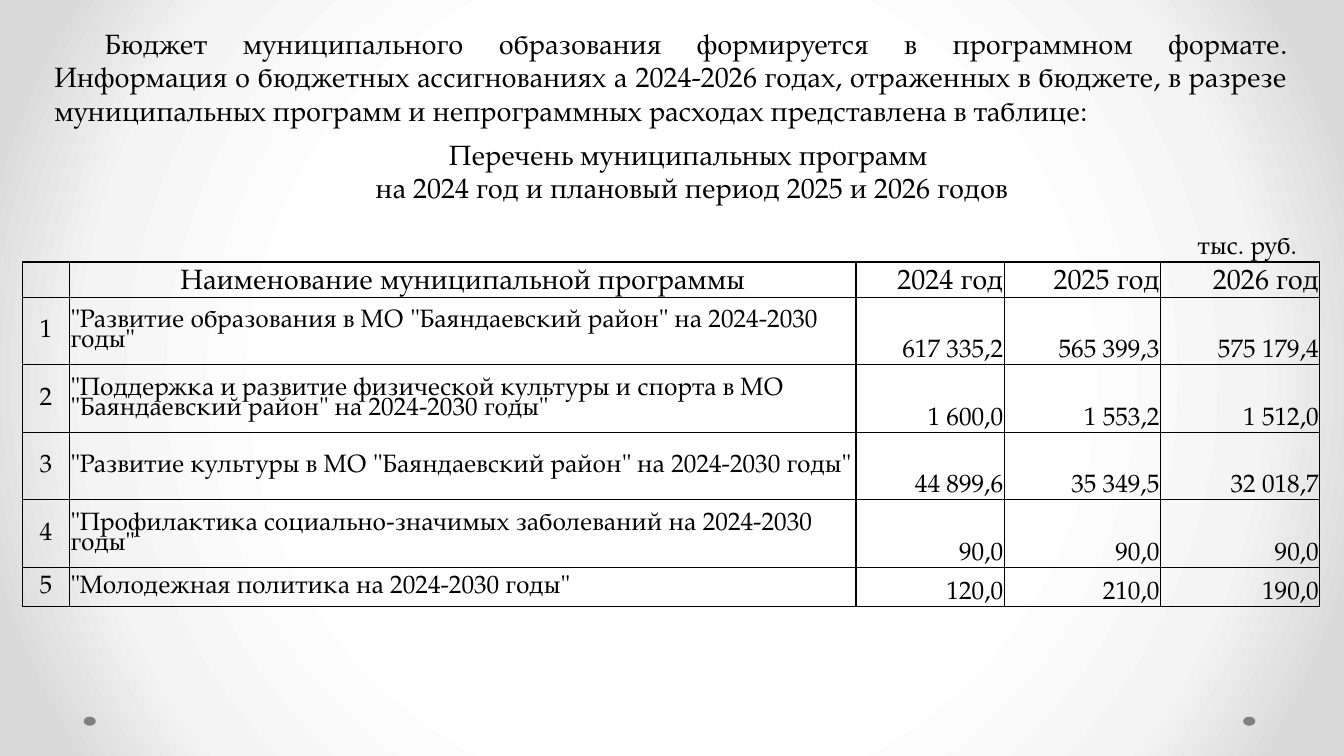
from pptx import Presentation
from pptx.dml.color import RGBColor
from pptx.enum.shapes import MSO_SHAPE as Shape
from pptx.enum.text import MSO_ANCHOR as Anchor, MSO_AUTO_SIZE as AutoSize, PP_ALIGN as Align
from pptx.oxml import parse_xml
from pptx.oxml.ns import nsdecls, qn
from pptx.util import Emu, Pt

BLACK = RGBColor(0x00, 0x00, 0x00)
GRAY = RGBColor(0x80, 0x80, 0x80)
BACKDROP = [
    (50, RGBColor(0xFF, 0xFF, 0xFF)),
    (76, RGBColor(0xF4, 0xF4, 0xF4)),
    (92, RGBColor(0xDA, 0xDA, 0xDA)),
]
FONT = "TeX Gyre Pagella"
TITLE_ONLY = 5

INTRO = (
    "Бюджет муниципального образования формируется в программном формате. "
    "Информация о бюджетных ассигнованиях а 2024-2026 годах, отраженных в бюджете, "
    "в разрезе муниципальных программ и непрограммных расходах представлена в таблице:"
)
HEADING = ["Перечень муниципальных программ ", "на 2024 год и плановый период 2025 и 2026 годов"]
HEADER = ["", "Наименование муниципальной программы", "2024 год", "2025 год", "2026 год"]
PROGRAMS = [
    ('"Развитие образования в МО "Баяндаевский район" на 2024-2030 годы"',
     "617 335,2", "565 399,3", "575 179,4"),
    ('"Поддержка и развитие физической культуры и спорта в МО "Баяндаевский район" на 2024-2030 годы"',
     "1 600,0", "1 553,2", "1 512,0"),
    ('"Развитие культуры в МО "Баяндаевский район" на 2024-2030 годы"',
     "44 899,6", "35 349,5", "32 018,7"),
    ('"Профилактика социально-значимых заболеваний на 2024-2030 годы"',
     "90,0", "90,0", "90,0"),
    ('"Молодежная политика на 2024-2030 годы"',
     "120,0", "210,0", "190,0"),
]
COLUMNS = [47, 780, 147, 155, 158]
ROWS = [35, 67, 67, 67, 67, 39]


def px(count):
    """One px is a hundredth of an inch."""
    return Emu(count * 9144)


class SlideBuilder:
    def __init__(self, page, font, color):
        self.page = page
        self.font = font
        self.color = color

    def backdrop(self, stops):
        self.page.background.fill.gradient()
        gradient = self.page.element.find(".//" + qn("a:gradFill"))
        marks = "".join(
            f'<a:gs pos="{percent * 1000}"><a:srgbClr val="{color}"/></a:gs>'
            for percent, color in stops
        )
        gradient.getparent().replace(gradient, parse_xml(
            f'<a:gradFill {nsdecls("a")} rotWithShape="1"><a:gsLst>{marks}</a:gsLst>'
            '<a:path path="circle"><a:fillToRect l="50000" t="50000" r="50000" b="50000"/>'
            "</a:path></a:gradFill>"
        ))

    def dot(self, left, top, width, height, color):
        oval = self.page.shapes.add_shape(Shape.OVAL, px(left), px(top), px(width), px(height))
        oval.shadow.inherit = False
        oval.fill.solid()
        oval.fill.fore_color.rgb = color
        oval.line.fill.background()

    def add_span(self, para, text, size, align):
        para.alignment = align
        span = para.add_run()
        span.text = text
        span.font.name = self.font
        span.font.size = Pt(size)
        span.font.color.rgb = self.color

    def fill_box(self, box, lines, size, align, wrap=True, indent=0):
        frame = box.text_frame
        frame.word_wrap = wrap
        frame.auto_size = AutoSize.SHAPE_TO_FIT_TEXT
        frame.vertical_anchor = Anchor.TOP
        for number, line in enumerate(lines):
            para = frame.add_paragraph() if number else frame.paragraphs[0]
            para.space_before = Pt(0)
            if indent:
                properties = para._p.get_or_add_pPr()
                properties.set("marL", "0")
                properties.set("indent", str(px(indent)))
            self.add_span(para, line, size, align)

    def text(self, left, top, width, height, lines, size, align, wrap=True, indent=0):
        box = self.page.shapes.add_textbox(px(left), px(top), px(width), px(height))
        self.fill_box(box, lines, size, align, wrap, indent)

    def title(self, left, top, width, height, lines, size):
        box = self.page.shapes.title
        box.left, box.top, box.width, box.height = px(left), px(top), px(width), px(height)
        self.fill_box(box, lines, size, Align.CENTER)

    def table(self, left, top, columns, rows):
        frame = self.page.shapes.add_table(
            len(rows), len(columns), px(left), px(top), px(sum(columns)), px(sum(rows))
        )
        grid = frame.table
        grid.first_row = grid.horz_banding = False
        for column, width in zip(grid.columns, columns):
            column.width = px(width)
        for row, height in zip(grid.rows, rows):
            row.height = px(height)
        return grid

    def cell(self, cell, text, size, align, anchor, spacing=1.0):
        cell.margin_left = cell.margin_top = cell.margin_right = px(1)
        cell.margin_bottom = px(0)
        cell.vertical_anchor = anchor
        properties = cell._tc.get_or_add_tcPr()
        for side in ("lnL", "lnR", "lnT", "lnB"):
            properties.append(parse_xml(
                f'<a:{side} {nsdecls("a")} w="{Pt(1)}"><a:solidFill>'
                f'<a:srgbClr val="{self.color}"/></a:solidFill></a:{side}>'
            ))
        cell.fill.background()
        if text:
            para = cell.text_frame.paragraphs[0]
            para.line_spacing = spacing
            self.add_span(para, text, size, align)


def main():
    deck = Presentation()
    deck.slide_width, deck.slide_height = px(1333), px(750)
    page = deck.slides.add_slide(deck.slide_layouts[TITLE_ONLY])
    builder = SlideBuilder(page, FONT, BLACK)

    # Background and footer dots
    builder.backdrop(BACKDROP)
    for left in (1233, 83):
        builder.dot(left, 711, 12, 9, GRAY)

    # Introduction and heading
    builder.text(44, 21, 1242, 111, [INTRO], 20, Align.JUSTIFY, indent=50)
    builder.title(249, 131, 874, 77, HEADING, 20)

    # Programme table
    grid = builder.table(22, 260, COLUMNS, ROWS)
    for column, label in enumerate(HEADER):
        align = Align.RIGHT if column > 1 else Align.CENTER
        builder.cell(grid.cell(0, column), label, 20, align, Anchor.BOTTOM)
    for row, (name, *amounts) in enumerate(PROGRAMS, start=1):
        builder.cell(grid.cell(row, 0), str(row), 18, Align.CENTER, Anchor.MIDDLE, 0.8)
        builder.cell(grid.cell(row, 1), name, 18, Align.LEFT, Anchor.MIDDLE, 0.8)
        for column, amount in enumerate(amounts, start=2):
            builder.cell(grid.cell(row, column), amount, 18, Align.RIGHT, Anchor.BOTTOM)

    # Unit of measure
    builder.text(1178, 223, 125, 40, ["тыс. руб."], 18, Align.LEFT, wrap=False)

    deck.save("out.pptx")


if __name__ == "__main__":
    main()
